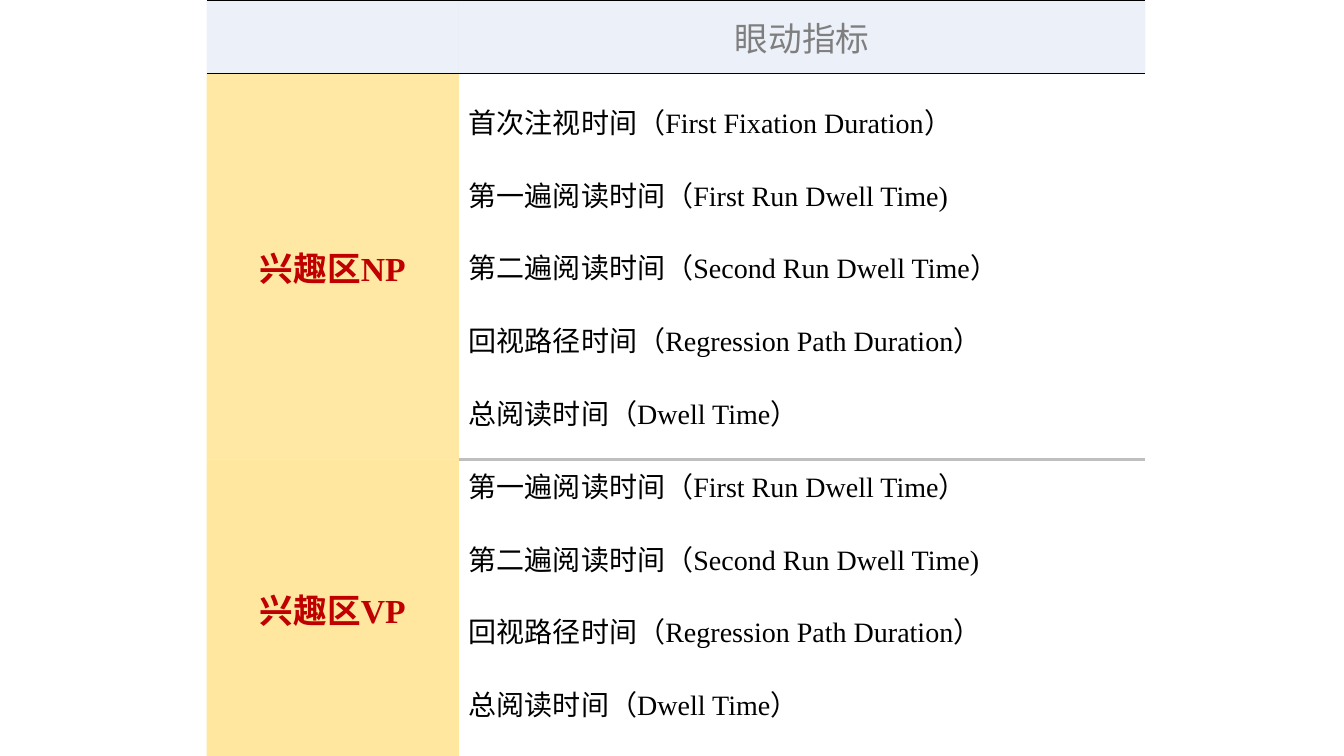
import pptx
import pptx.dml.color
import pptx.enum.text
import pptx.oxml.ns
import pptx.util
from lxml import etree
from dataclasses import dataclass

HEADING = "眼动指标"
REGIONS = [
    ("兴趣区NP", [
        "首次注视时间（First Fixation Duration）",
        "第一遍阅读时间（First Run Dwell Time)",
        "第二遍阅读时间（Second Run Dwell Time）",
        "回视路径时间（Regression Path Duration）",
        "总阅读时间（Dwell Time）",
    ]),
    ("兴趣区VP", [
        "第一遍阅读时间（First Run Dwell Time）",
        "第二遍阅读时间（Second Run Dwell Time)",
        "回视路径时间（Regression Path Duration）",
        "总阅读时间（Dwell Time）",
    ]),
]
SLIDE_SIZE = (13.33, 7.5)
TABLE_LEFT = 2.05
COLUMNS = (2.5, 6.81)
ROWS = (0.73, 3.83, 2.94)


@dataclass(frozen=True)
class Theme:
    font: str = "Times New Roman"
    heading: str = "7F7F7F"
    label: str = "C00000"
    body: str = "000000"
    header_fill: tuple = ("B4C7E7", 25)
    region_fills: tuple = (("FFD966", 60), ("FFD966", 62))
    rule: tuple = ("000000", 1)
    divider: tuple = ("BFBFBF", 2.25)
    large: int = 24
    small: int = 20
    gap: int = 23


THEME = Theme()
inches = pptx.util.Inches
centre = pptx.enum.text.PP_ALIGN.CENTER
left = pptx.enum.text.PP_ALIGN.LEFT


def add_child(parent, tag, **attributes):
    return etree.SubElement(parent, pptx.oxml.ns.qn(tag), attributes)


def set_borders(cell, top=None, bottom=None):
    """Draw the given (colour, points) edges and clear the others."""
    properties = cell._tc.get_or_add_tcPr()
    edges = {"a:lnL": None, "a:lnR": None, "a:lnT": top, "a:lnB": bottom}
    for tag, edge in edges.items():
        if edge:
            colour, points = edge
            line = add_child(properties, tag, w=str(int(pptx.util.Pt(points))))
            add_child(add_child(line, "a:solidFill"), "a:srgbClr", val=colour)
        else:
            add_child(add_child(properties, tag, w="0"), "a:noFill")


def set_fill(cell, fill):
    """Fill with a (colour, opacity percent) pair, or leave the cell clear."""
    if fill is None:
        cell.fill.background()
        return
    colour, opacity = fill
    cell.fill.solid()
    cell.fill.fore_color.rgb = pptx.dml.color.RGBColor.from_string(colour)
    swatch = next(cell._tc.tcPr.iter(pptx.oxml.ns.qn("a:srgbClr")))
    for swatch in cell._tc.tcPr.find(pptx.oxml.ns.qn("a:solidFill")):
        add_child(swatch, "a:alpha", val=str(opacity * 1000))


def write(cell, lines, size, colour, align, bold=False):
    cell.vertical_anchor = pptx.enum.text.MSO_ANCHOR.MIDDLE
    frame = cell.text_frame
    frame.text = "\n".join(lines)
    for index, para in enumerate(frame.paragraphs):
        para.alignment = align
        para.space_before = pptx.util.Pt(THEME.gap if index else 0)
        para.font.name = THEME.font
        para.font.size = pptx.util.Pt(size)
        para.font.bold = bold
        para.font.color.rgb = pptx.dml.color.RGBColor.from_string(colour)


def main():
    deck = pptx.Presentation()
    deck.slide_width, deck.slide_height = map(inches, SLIDE_SIZE)
    page = deck.slides.add_slide(deck.slide_layouts[6])
    table = page.shapes.add_table(
        len(ROWS), len(COLUMNS), inches(TABLE_LEFT), 0,
        inches(sum(COLUMNS)), inches(sum(ROWS))).table
    table.first_row = table.horz_banding = False
    for column, width in zip(table.columns, COLUMNS):
        column.width = inches(width)
    for row, height in zip(table.rows, ROWS):
        row.height = inches(height)

    for cell in table.rows[0].cells:
        set_borders(cell, THEME.rule, THEME.rule)
        set_fill(cell, THEME.header_fill)
    write(table.cell(0, 1), [HEADING], THEME.large, THEME.heading, centre)

    for row, (label, measures) in enumerate(REGIONS, start=1):
        first, last = row == 1, row == len(REGIONS)
        name, details = table.rows[row].cells
        top = THEME.rule if first else None
        bottom = THEME.rule if last else None
        set_borders(name, top, bottom)
        set_borders(details, top or THEME.divider, bottom or THEME.divider)
        set_fill(name, THEME.region_fills[row - 1])
        set_fill(details, None)
        write(name, [label], THEME.large, THEME.label, centre, bold=True)
        write(details, measures, THEME.small, THEME.body, left)
        if last:
            details.margin_bottom = inches(0.35)

    deck.save("out.pptx")


if __name__ == "__main__":
    main()
